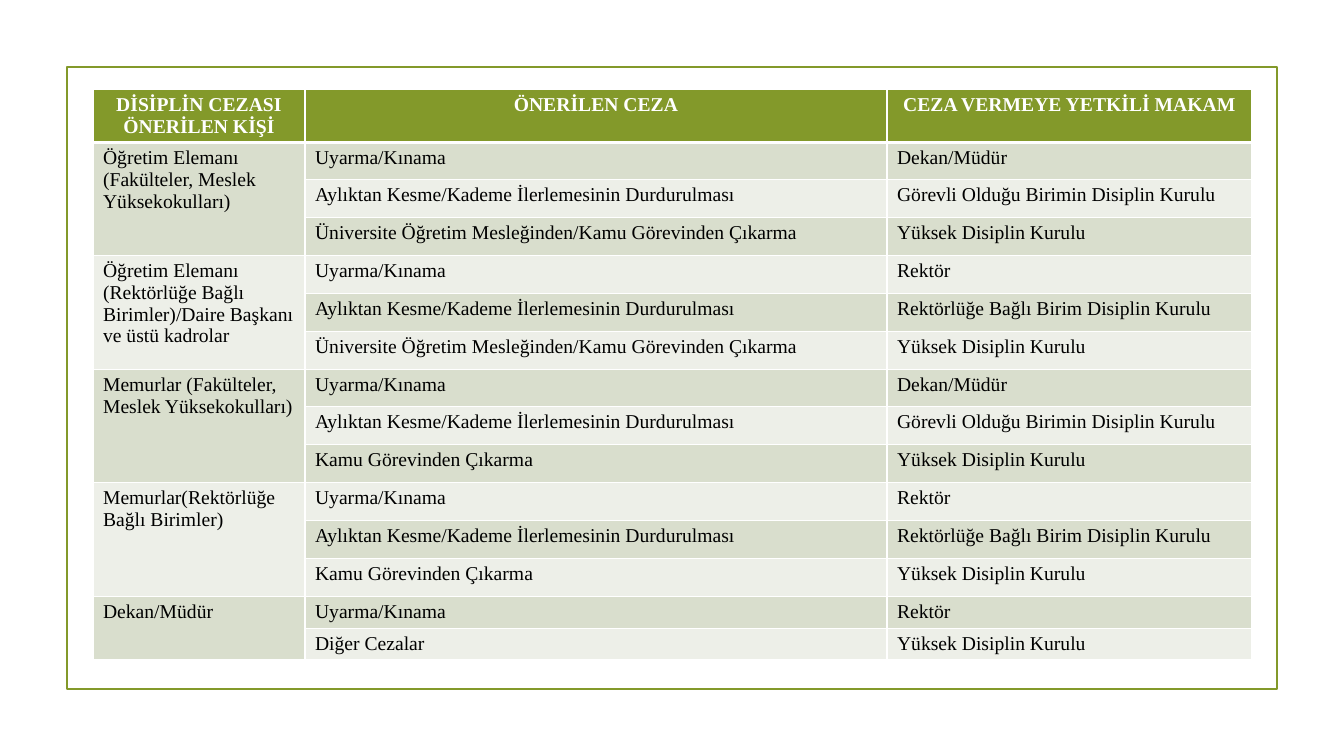
from lxml import etree
from pptx import Presentation
from pptx import util as u
from pptx.dml.color import RGBColor
from pptx.enum import shapes, text
from pptx.oxml.ns import qn

PX = 12192000 / 1344
FONT = "Times New Roman"
GREEN, WHITE, BLACK = "83992A", "FFFFFF", "000000"
BANDS = ("D9DECD", "EDEFE8")

WARNING = "Uyarma/Kınama"
PAY_CUT = "Aylıktan Kesme/Kademe İlerlemesinin Durdurulması"
TEACHING_BAN = "Üniversite Öğretim Mesleğinden/Kamu Görevinden Çıkarma"
DISMISSAL = "Kamu Görevinden Çıkarma"
DEAN, RECTOR = "Dekan/Müdür", "Rektör"
UNIT_BOARD = "Görevli Olduğu Birimin Disiplin Kurulu"
RECTORATE_BOARD = "Rektörlüğe Bağlı Birim Disiplin Kurulu"
HIGH_BOARD = "Yüksek Disiplin Kurulu"

HEADERS = ["DİSİPLİN CEZASI ÖNERİLEN KİŞİ", "ÖNERİLEN CEZA", "CEZA VERMEYE YETKİLİ MAKAM"]
GROUPS = [
    ("Öğretim Elemanı (Fakülteler, Meslek Yüksekokulları)",
     [(WARNING, DEAN), (PAY_CUT, UNIT_BOARD), (TEACHING_BAN, HIGH_BOARD)]),
    ("Öğretim Elemanı (Rektörlüğe Bağlı Birimler)/Daire Başkanı ve üstü kadrolar",
     [(WARNING, RECTOR), (PAY_CUT, RECTORATE_BOARD), (TEACHING_BAN, HIGH_BOARD)]),
    ("Memurlar (Fakülteler, Meslek Yüksekokulları)",
     [(WARNING, DEAN), (PAY_CUT, UNIT_BOARD), (DISMISSAL, HIGH_BOARD)]),
    ("Memurlar(Rektörlüğe Bağlı Birimler)",
     [(WARNING, RECTOR), (PAY_CUT, RECTORATE_BOARD), (DISMISSAL, HIGH_BOARD)]),
    (DEAN, [(WARNING, RECTOR), ("Diğer Cezalar", HIGH_BOARD)]),
]
COLUMNS = [212, 582, 365]
BODY_EDGES = [454 * i // 12 for i in range(13)]
ROWS = [52] + [b - a for a, b in zip(BODY_EDGES, BODY_EDGES[1:])] + [32, 31]


def px(n):
    return u.Emu(round(n * PX))


def rgb(color):
    return RGBColor.from_string(color)


def add_frame(s, x, y, w, h):
    sp = s.shapes.add_shape(shapes.MSO_SHAPE.RECTANGLE, px(x), px(y), px(w), px(h))
    sp.shadow.inherit = False
    sp.fill.background()
    sp.line.color.rgb = rgb(GREEN)
    sp.line.width = u.Pt(1.25)


def set_border(cell, side, width):
    ln = etree.SubElement(cell._tc.get_or_add_tcPr(), qn("a:ln" + side), w=str(u.Pt(width)))
    fill = etree.SubElement(ln, qn("a:solidFill"))
    etree.SubElement(fill, qn("a:srgbClr"), val=WHITE)


def style_cell(cell, row, fill):
    set_border(cell, "L", 1)
    set_border(cell, "R", 1)
    set_border(cell, "T", 3 if row == 1 else 1)
    set_border(cell, "B", 3 if row == 0 else 1)
    cell.fill.solid()
    cell.fill.fore_color.rgb = rgb(fill)


def write_cell(cell, words, header=False):
    p = cell.text_frame.paragraphs[0]
    if header:
        p.alignment = text.PP_ALIGN.CENTER
    r = p.add_run()
    r.text = words
    r.font.name = FONT
    r.font.size = u.Pt(14)
    r.font.bold = header
    r.font.color.rgb = rgb(WHITE if header else BLACK)


def add_penalty_table(s, x, y):
    frame = s.shapes.add_table(len(ROWS), len(COLUMNS), px(x), px(y),
                               px(sum(COLUMNS)), px(sum(ROWS)))
    table = frame.table
    for column, width in zip(table.columns, COLUMNS):
        column.width = px(width)
    for i, height in enumerate(ROWS):
        table.rows[i].height = px(height)
        for j in range(len(COLUMNS)):
            style_cell(table.cell(i, j), i, BANDS[(i - 1) % 2] if i else GREEN)
    for j, header in enumerate(HEADERS):
        write_cell(table.cell(0, j), header, header=True)
    row = 1
    for person, penalties in GROUPS:
        first = table.cell(row, 0)
        first.merge(table.cell(row + len(penalties) - 1, 0))
        write_cell(first, person)
        for penalty, authority in penalties:
            write_cell(table.cell(row, 1), penalty)
            write_cell(table.cell(row, 2), authority)
            row += 1


def main():
    prs = Presentation()
    prs.slide_width, prs.slide_height = px(1344), px(756)
    s = prs.slides.add_slide(prs.slide_layouts[6])
    add_frame(s, 67, 67, 1210, 622)
    add_penalty_table(s, 93, 89)
    prs.save("out.pptx")


if __name__ == "__main__":
    main()
